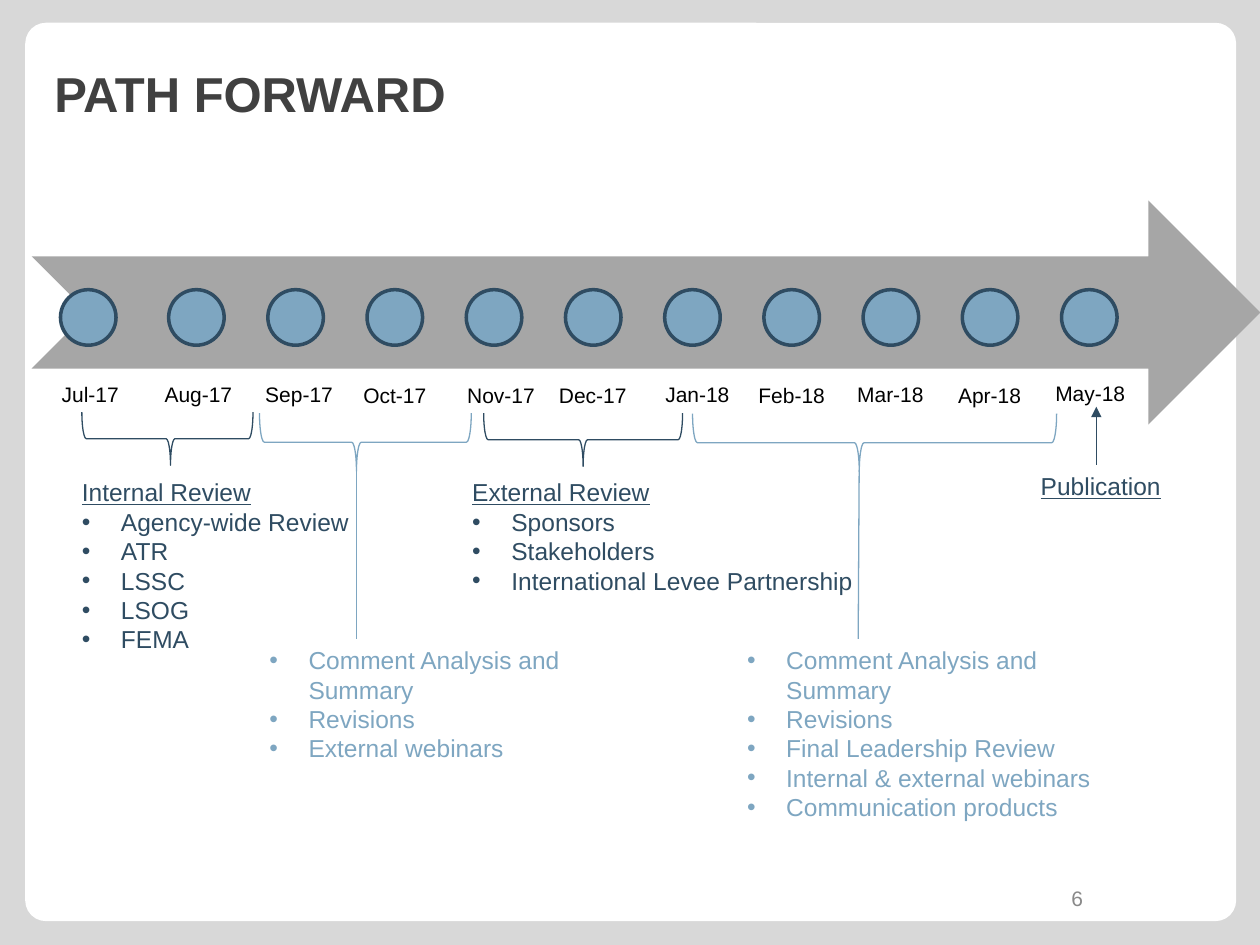
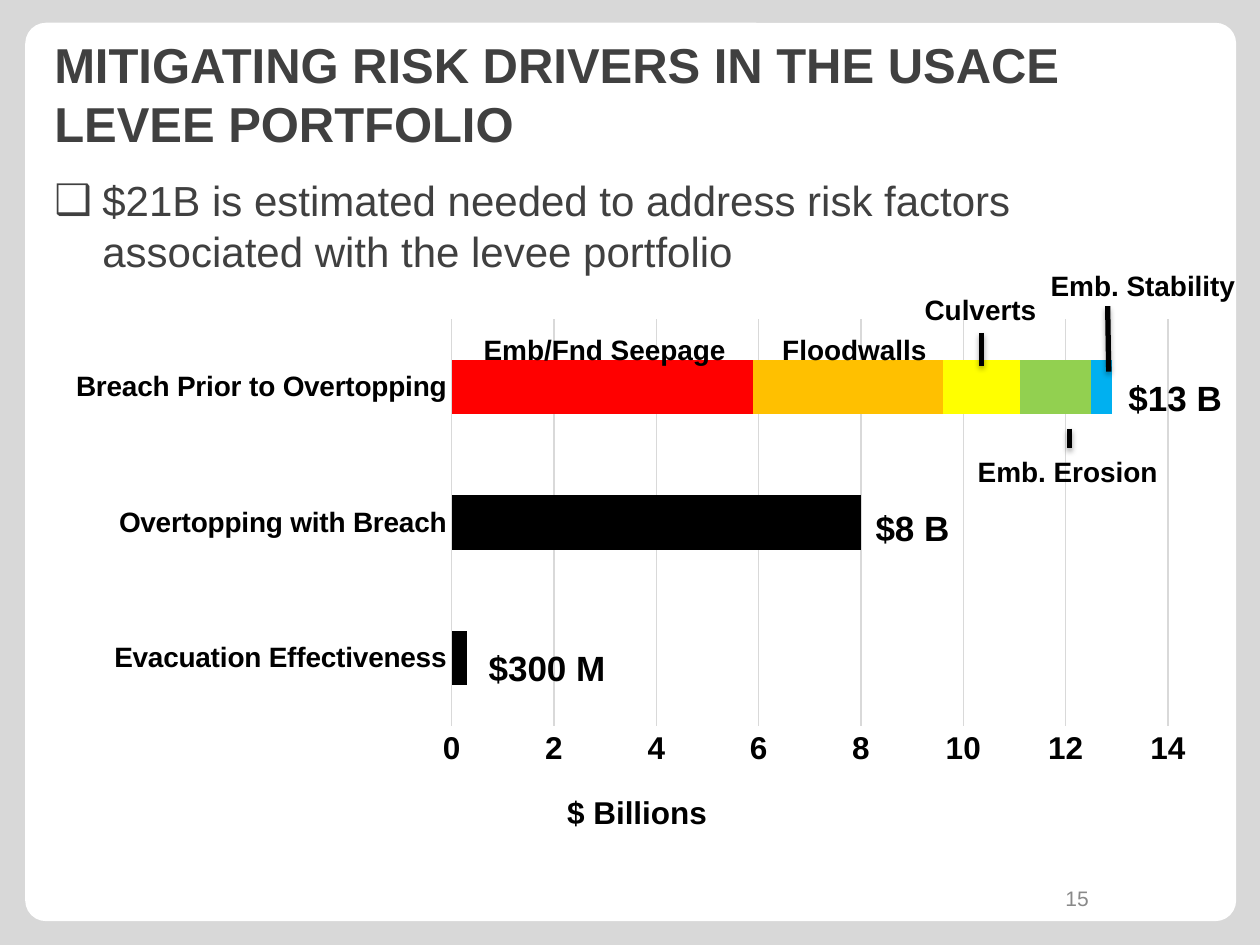
"""Builds a review timeline slide and a levee risk cost chart slide."""
from lxml import etree
from pptx import Presentation
from pptx import util as u
from pptx.chart.data import CategoryChartData
from pptx.dml.color import RGBColor
from pptx.enum import chart as ch, shapes, text
from pptx.oxml import parse_xml
from pptx.oxml.ns import nsdecls, qn

DARK, LIGHT, GREY, INK = "2F4C62", "7EA6C1", "A6A6A6", "404040"
BLACK, WHITE, PAGE, RULE, NUMBER = "000000", "FFFFFF", "D8D8D8", "D9D9D9", "898989"
LEFT, CENTER = text.PP_ALIGN.LEFT, text.PP_ALIGN.CENTER
MIDDLE, TOP = text.MSO_ANCHOR.MIDDLE, text.MSO_ANCHOR.TOP
SHAPE = shapes.MSO_SHAPE


def rgb(value):
    return RGBColor.from_string(value)


def cm(values):
    return [u.Cm(v) for v in values]


def apply(obj, **values):
    for name, value in values.items():
        setattr(obj, name, value)


class Deck:
    """Holds the shared style and the slide being drawn."""

    font = "Arial"

    def __init__(self):
        self.prs = Presentation()
        apply(self.prs, slide_width=u.Cm(25.4), slide_height=u.Cm(19.05))

    def slide(self, layout, title, number):
        self.s = self.prs.slides.add_slide(self.prs.slide_layouts[layout])
        fill = self.s.background.fill
        fill.solid()
        fill.fore_color.rgb = rgb(PAGE)
        card = self.shape(SHAPE.ROUNDED_RECTANGLE, (0.51, 0.46, 24.41, 18.11), WHITE, adj=(0.023,))
        self.s.shapes._spTree.insert(2, card._element)
        self.placeholder(0, (0.84, 0.76, 23.29, 2.24), title, 28, MIDDLE, bold=True)
        self.text((20.7, 17.6, 2.03, 1.02), [number], 12, NUMBER, align=CENTER, anchor=MIDDLE)

    def style(self, font, size, color, **values):
        apply(font, name=self.font, size=u.Pt(size), **values)
        font.color.rgb = rgb(color)

    def paragraph(self, p, words, size, color, bullet=None, indent=0.79, align=LEFT, **values):
        if bullet:
            pPr = p._p.get_or_add_pPr()
            pPr.set("marL", str(u.Cm(indent)))
            pPr.set("indent", str(-u.Cm(indent)))
            etree.SubElement(pPr, qn("a:buFont")).set("typeface", self.font)
            etree.SubElement(pPr, qn("a:buChar")).set("char", bullet)
        apply(p, alignment=align, space_before=u.Pt(0))
        r = p.add_run()
        r.text = words
        self.style(r.font, size, color, **values)

    def placeholder(self, index, box, words, size, anchor, **values):
        sp = self.s.placeholders[index]
        apply(sp, **dict(zip(("left", "top", "width", "height"), cm(box))))
        tf = sp.text_frame
        apply(tf, auto_size=text.MSO_AUTO_SIZE.NONE, vertical_anchor=anchor)
        self.paragraph(tf.paragraphs[0], words, size, INK, **values)

    def text(self, box, lines, size, color, head=None, bullet=None, wrap=True,
             anchor=TOP, frame=None, spacing=None, **values):
        tf = self.s.shapes.add_textbox(*cm(box)).text_frame
        apply(tf, word_wrap=wrap, vertical_anchor=anchor, **(frame or {}))
        if not wrap:
            tf.auto_size = text.MSO_AUTO_SIZE.SHAPE_TO_FIT_TEXT
        rows = [(head, None, True)] if head else []
        rows += [(line, bullet, False) for line in lines]
        for i, (line, mark, underline) in enumerate(rows):
            p = tf.add_paragraph() if i else tf.paragraphs[0]
            self.paragraph(p, line, size, color, mark, underline=underline, **values)
            if spacing:
                p.line_spacing = spacing

    def shape(self, kind, box, fill=None, line=None, width=0.75, adj=()):
        sp = self.s.shapes.add_shape(kind, *cm(box))
        sp.shadow.inherit = False
        for i, value in enumerate(adj):
            sp.adjustments[i] = value
        for part, color in ((sp.fill, fill), (sp.line.fill, line)):
            if color:
                part.solid()
                part.fore_color.rgb = rgb(color)
            else:
                part.background()
        if line:
            sp.line.width = u.Pt(width)
        return sp

    def brace(self, x, y, w, h, color, tip):
        box = (x + (w - h) / 2, y + (h - w) / 2, h, w)
        sp = self.shape(SHAPE.RIGHT_BRACE, box, line=color, adj=(0.083, tip))
        sp.rotation = 90

    def line(self, ends, color, width=0.75, arrow=False, shadow=False):
        sp = self.s.shapes.add_connector(shapes.MSO_CONNECTOR.STRAIGHT, *cm(ends))
        sp.line.color.rgb = rgb(color)
        sp.line.width = u.Pt(width)
        if arrow:
            etree.SubElement(sp.line._get_or_add_ln(), qn("a:tailEnd")).set("type", "triangle")
        effects = etree.SubElement(sp._element.spPr, qn("a:effectLst"))
        if shadow:
            effects.append(parse_xml(
                f'<a:outerShdw {nsdecls("a")} blurRad="40000" dist="23000" dir="5400000" '
                'rotWithShape="0"><a:srgbClr val="000000"><a:alpha val="35000"/>'
                '</a:srgbClr></a:outerShdw>'))

    def layout_xml(self, inner=False, **fractions):
        target = '<c:layoutTarget val="inner"/>' if inner else ""
        modes = "".join(f'<c:{k}Mode val="edge"/>' for k in "xy")
        sizes = "".join(f'<c:{k} val="{v}"/>' for k, v in fractions.items())
        return parse_xml(f'<c:layout {nsdecls("c")}><c:manualLayout>{target}{modes}{sizes}'
                         '</c:manualLayout></c:layout>')

    def place(self, parent, before, layout):
        for old in parent.findall(qn("c:layout")):
            parent.remove(old)
        parent.insert(before, layout)

    def bar_chart(self, box, categories, series, axis_title):
        data = CategoryChartData()
        data.categories = categories
        for i, (values, _) in enumerate(series, 1):
            data.add_series(f"Series {i}", values)
        chart = self.s.shapes.add_chart(ch.XL_CHART_TYPE.BAR_STACKED, *cm(box), data).chart
        apply(chart, has_legend=False, has_title=False)
        self.style(chart.font, 10, BLACK)
        plot = chart.plots[0]
        apply(plot, gap_width=150, overlap=100, vary_by_categories=False)
        for ser, (_, color) in zip(plot.series, series):
            ser.format.fill.solid()
            ser.format.fill.fore_color.rgb = rgb(color)
        cat, val = chart.category_axis, chart.value_axis
        for axis, size in ((cat, 16), (val, 18)):
            apply(axis, major_tick_mark=ch.XL_TICK_MARK.NONE, minor_tick_mark=ch.XL_TICK_MARK.NONE)
            self.style(axis.tick_labels.font, size, BLACK, bold=True)
        apply(val, minimum_scale=0, maximum_scale=14, major_unit=2, has_major_gridlines=True)
        for line in (cat.format.line, val.major_gridlines.format.line):
            line.color.rgb = rgb(RULE)
            line.width = u.Pt(0.75)
        val.format.line.fill.background()
        p = val.axis_title.text_frame.paragraphs[0]
        self.paragraph(p, axis_title, 18, BLACK, align=CENTER, bold=True)
        self.place(val.axis_title._element, 1, self.layout_xml(x=0.44, y=0.88))
        area = chart._chartSpace.chart.plotArea
        self.place(area, 0, self.layout_xml(True, x=0.345, y=0.02, w=0.62, h=0.748))
        return plot


def timeline(d):
    d.slide(5, "PATH FORWARD", "6")
    d.shape(SHAPE.NOTCHED_RIGHT_ARROW, (0.64, 4.04, 24.77, 4.52), GREY)
    months = [("Jul-17", 1.82, 7.52), ("Aug-17", 4, 7.52), ("Sep-17", 6.03, 7.52),
              ("Oct-17", 7.96, 7.54), ("Nov-17", 10.1, 7.54), ("Dec-17", 11.95, 7.54),
              ("Jan-18", 14.06, 7.52), ("Feb-18", 15.96, 7.54), ("Mar-18", 17.95, 7.52),
              ("Apr-18", 19.95, 7.54), ("May-18", 21.98, 7.49)]
    inset = dict(margin_left=0, margin_right=0, margin_top=u.Cm(0.23), margin_bottom=u.Cm(0.23))
    for i, (month, center, top) in enumerate(months):
        d.text((center - 0.95, top, 1.9, 4.52), [month], 12, BLACK,
               align=CENTER, frame=inset, spacing=0.9)
        left = 1.4 + 2 * i if i else 1.22
        d.shape(SHAPE.OVAL, (left, 5.84, 1.12, 1.12), LIGHT, DARK, 2)
    for brace in [(1.65, 8.31, 3.45, 1.07, DARK, 0.482), (9.75, 8.33, 4.01, 1.07, DARK, 0.5),
                  (5.23, 8.33, 4.27, 1.17, LIGHT, 0.542), (13.96, 8.34, 7.34, 1.17, LIGHT, 0.542)]:
        d.brace(*brace)
    d.text((1.4, 9.5, 5.94, 3.84), ["Agency-wide Review", "ATR", "LSSC", "LSOG", "FEMA"],
           14, DARK, "Internal Review", "•", wrap=False)
    d.text((9.27, 9.5, 8.23, 2.64), ["Sponsors", "Stakeholders", "International Levee Partnership"],
           14, DARK, "External Review", "•", wrap=False)
    d.text((20.73, 9.37, 3.56, 0.86), [], 14, DARK, "Publication")
    d.line((22.1, 9.37, 22.1, 8.2), DARK, arrow=True)
    d.line((7.19, 9.47, 7.19, 12.88), LIGHT)
    d.line((17.32, 9.47, 17.3, 12.88), LIGHT)
    shared = ["Comment Analysis and Summary", "Revisions"]
    d.text((5.18, 12.88, 7.06, 3.25), shared + ["External webinars"], 14, LIGHT, bullet="•")
    d.text((14.81, 12.88, 7.57, 4.45),
           shared + ["Final Leadership Review", "Internal & external webinars",
                     "Communication products"], 14, LIGHT, bullet="•")


def risk_costs(d):
    d.slide(1, "MITIGATING RISK DRIVERS IN THE USACE LEVEE PORTFOLIO", "15")
    d.placeholder(1, (0.84, 3.4, 23.29, 13.11),
                  "$21B is estimated needed to address risk factors associated with the levee portfolio",
                  24, TOP, bullet="❑", indent=0.97)
    categories = ["Evacuation Effectiveness", "Overtopping with Breach", "Breach Prior to Overtopping"]
    drivers = [(3.7, "FFC000"), (1.5, "FFFF00"), (1.4, "92D050"), (0.4, "00B0F0")]
    series = [((0.3, 8, 5.9), BLACK)] + [((None, None, v), color) for v, color in drivers]
    plot = d.bar_chart((1.07, 6.22, 23.29, 10.95), categories, series, "$ Billions")
    fill = plot.series[0].points[2].format.fill
    fill.solid()
    fill.fore_color.rgb = rgb("FF0000")
    for words, x, y, w in [("$300 M", 9.6, 12.9, 2.9), ("$8 B", 17.4, 10.08, 2.01),
                           ("$13 B", 22.5, 7.47, 2.41)]:
        d.text((x, y, w, 1.12), [words], 20, BLACK, wrap=False, bold=True)
    for words, x, y, w in [("Emb/Fnd Seepage", 9.5, 6.58, 5.44), ("Floodwalls", 15.52, 6.58, 3.45),
                           ("Culverts", 18.39, 5.77, 2.79), ("Emb. Erosion", 19.46, 9.04, 4.19),
                           ("Emb. Stability", 20.93, 5.28, 4.29)]:
        d.text((x, y, w, 0.94), [words], 16, BLACK, wrap=False, bold=True)
    for ends in [(19.79, 6.71, 19.79, 7.37), (21.56, 8.64, 21.56, 9.04), (22.33, 6.17, 22.35, 7.49)]:
        d.line(ends, BLACK, 3, shadow=True)


def main():
    d = Deck()
    timeline(d)
    risk_costs(d)
    d.prs.save("out.pptx")


if __name__ == "__main__":
    main()
